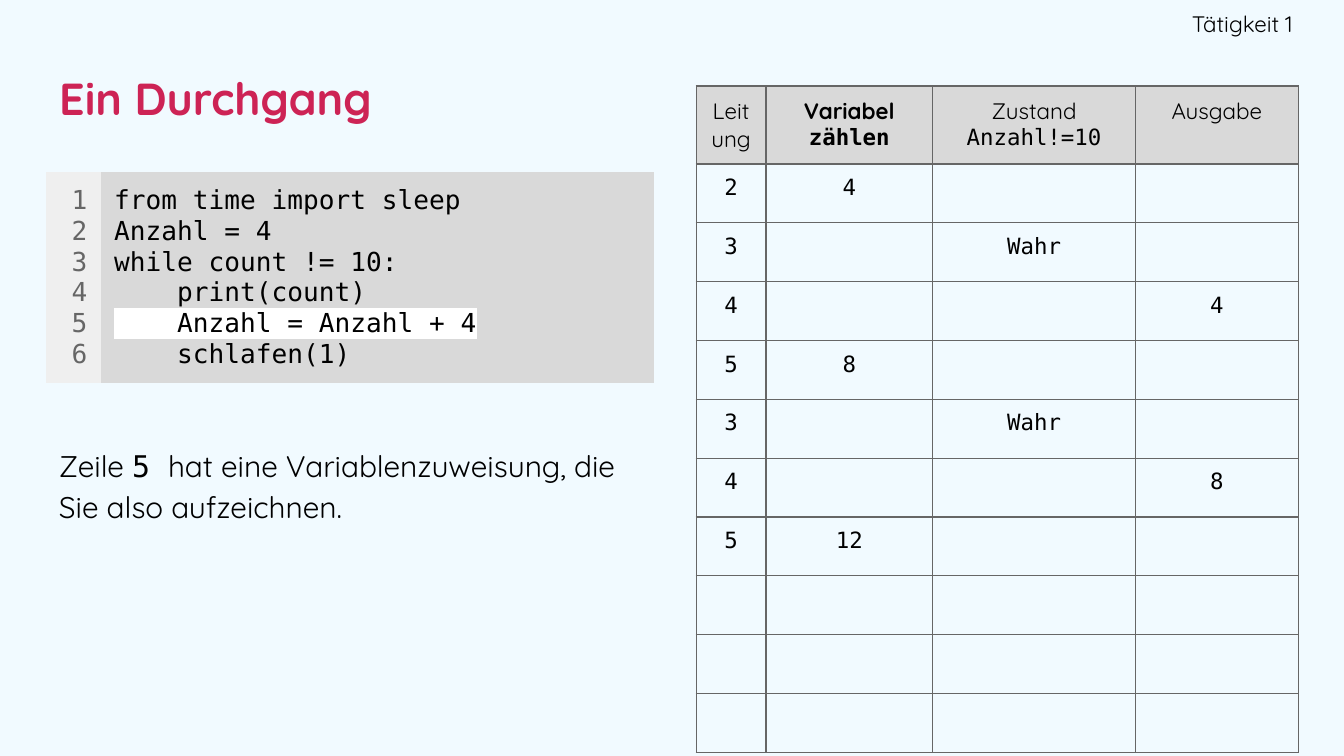
from lxml.etree import SubElement as Sub
from pptx import Presentation
from pptx.dml.color import RGBColor as RGB
from pptx.enum.text import MSO_ANCHOR as Anchor, MSO_AUTO_SIZE as Auto, PP_ALIGN as Align
from pptx.oxml import parse_xml
from pptx.oxml.ns import nsdecls, qn
from pptx.util import Inches, Pt

SANS, MONO = "Quicksand", "DejaVu Sans Mono"
PLAIN = "{2D5ABB26-0587-4C30-8999-92F81FD0307C}"


def paint(item, tone):
    if hasattr(item, "solid"):
        item.solid()
        item.fore_color.rgb = RGB.from_string(tone)
    else:
        item.rgb = RGB.from_string(tone)


def style(part, face, size, tone="000000", bold=False, align=Align.LEFT):
    part.alignment = align
    for run in part.runs:
        run.font.name = face
        run.font.size = Pt(size)
        run.font.bold = bold
        paint(run.font.color, tone)


deck = Presentation()
deck.slide_width, deck.slide_height = Inches(10), Inches(10 * 9 / 16)
slide = deck.slides.add_slide(deck.slide_layouts[5])
paint(slide.background.fill, "F1FAFF")
shapes = slide.shapes

title = shapes.title
title.left, title.top = Inches(0.34), Inches(0.34)
title.width, title.height = Inches(9.32), Inches(0.77)
label = shapes.add_textbox(Inches(7.48), 0, Inches(2.14), Inches(0.35))
body = shapes.add_textbox(Inches(0.34), Inches(3.19), Inches(4.48), Inches(1.58))
for box, anchor in [(title, Anchor.MIDDLE), (label, Anchor.MIDDLE), (body, Anchor.TOP)]:
    frame = box.text_frame
    frame.word_wrap = True
    frame.auto_size = Auto.NONE
    frame.vertical_anchor = anchor
    frame.margin_left = frame.margin_right = Inches(0.1)
    frame.margin_top = frame.margin_bottom = Inches(0.1)
label.text_frame.margin_right = 0

title.text_frame.text = "Ein Durchgang"
style(title.text_frame.paragraphs[0], SANS, 24, "CD2355", True)
label.text_frame.text = "Tätigkeit 1"
style(label.text_frame.paragraphs[0], SANS, 12, align=Align.RIGHT)

note = body.text_frame.paragraphs[0]
note.line_spacing = 1.15
note.space_after = Pt(16)
for text in ["Zeile ", "5 ", "hat eine Variablenzuweisung, die Sie also aufzeichnen."]:
    note.add_run().text = text
style(note, SANS, 16)
note.runs[1].font.name = MONO

lines = [
    "from time import sleep",
    "Anzahl = 4",
    "while count != 10:",
    "    print(count)",
    "    Anzahl = Anzahl + 4",
    "    schlafen(1)",
]
steps = [
    ["Leitung", "Variabel\nzählen", "Zustand\nAnzahl!=10", "Ausgabe"],
    ["2", "4", "", ""],
    ["3", "", "Wahr", ""],
    ["4", "", "", "4"],
    ["5", "8", "", ""],
    ["3", "", "Wahr", ""],
    ["4", "", "", "8"],
    ["5", "12", "", ""],
] + [[""] * 4] * 3
nums = "\n".join(str(n + 1) for n in range(len(lines)))

grids = []
for rows, left, top, wides, highs, pad in [
    ([[nums, "\n".join(lines)]], 0.34, 1.28, [0.41, 4.12], [1.56], 0.1),
    (steps, 5.18, 0.64, [0.52, 1.24, 1.51, 1.21], [0.58] + [4.38 / 10] * 10, 0.08),
]:
    grid = shapes.add_table(len(rows), len(wides), Inches(left), Inches(top),
                            Inches(sum(wides)), Inches(sum(highs))).table
    grid.first_row = grid.horz_banding = False
    grid._tbl.tblPr.find(qn("a:tableStyleId")).text = PLAIN
    for col, wide in zip(grid.columns, wides):
        col.width = Inches(wide)
    for row, high, texts in zip(grid.rows, highs, rows):
        row.height = Inches(high)
        for cell, text in zip(row.cells, texts):
            cell.text_frame.text = text
            cell.margin_left = cell.margin_right = Inches(pad)
            cell.margin_top = cell.margin_bottom = Inches(pad)
    grids.append(grid)
code, trace = grids

for c, (fill, tone, align) in enumerate([("EFEFEF", "666666", Align.RIGHT),
                                         ("D9D9D9", "000000", Align.LEFT)]):
    cell = code.cell(0, c)
    paint(cell.fill, fill)
    for line in cell.text_frame.paragraphs:
        style(line, MONO, 14, tone, align=align)
mark = parse_xml(f'<a:highlight {nsdecls("a")}><a:srgbClr val="FFFFFF"/></a:highlight>')
active = code.cell(0, 1).text_frame.paragraphs[4].runs[0]
active._r.rPr.find(qn("a:solidFill")).addnext(mark)

for r, row in enumerate(trace.rows):
    for c, cell in enumerate(row.cells):
        props = cell._tc.get_or_add_tcPr()
        for side in "LRTB":
            edge = Sub(props, qn(f"a:ln{side}"), w=str(Pt(0.75)))
            Sub(Sub(edge, qn("a:solidFill")), qn("a:srgbClr"), val="666666")
        if r == 0:
            paint(cell.fill, "D9D9D9")
        else:
            cell.fill.background()
        for n, line in enumerate(cell.text_frame.paragraphs):
            face = SANS if r == 0 and n == 0 else MONO
            style(line, face, 12, bold=r == 0 and c == 1, align=Align.CENTER)
            if not line.runs:
                line._p.get_or_add_endParaRPr().set("sz", "1200")

deck.save("out.pptx")
